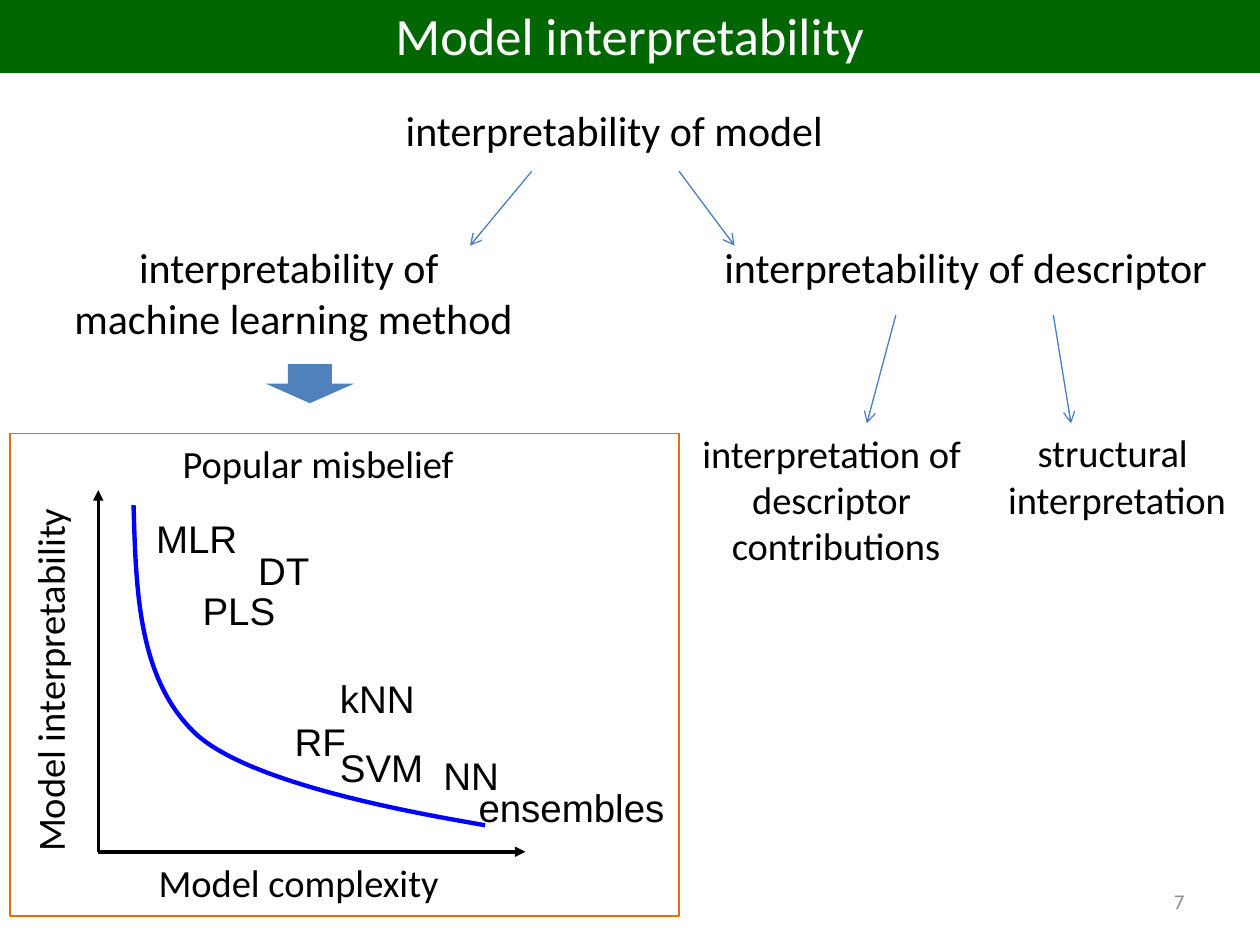
from lxml.etree import SubElement
from pptx import Presentation
from pptx.dml.color import RGBColor
from pptx.enum.shapes import MSO_CONNECTOR, MSO_SHAPE
from pptx.enum.text import MSO_ANCHOR, MSO_AUTO_SIZE, PP_ALIGN
from pptx.oxml.ns import qn
from pptx.util import Inches, Pt

COLS, ROWS = 100, 75
CELL = Inches(10) / COLS
BLACK, WHITE, GREEN, GREY = "000000", "FFFFFF", "006600", "8C8C8C"
BLUE, STEEL, CURVE, ORANGE = "4F81BD", "4B7EBC", "0000FF", "E46C0A"


def cells(*nums):
    """Turn grid cells into lengths."""
    return [round(num * CELL) for num in nums]


def paint(fmt, color):
    """Give a fill or a font colour a hex colour."""
    if hasattr(fmt, "solid"):
        fmt.solid()
        fmt = fmt.fore_color
    fmt.rgb = RGBColor.from_string(color)


def style(shape, fill=None, line=None, width=1):
    """Set fill and line of a shape and drop its shadow."""
    shape.shadow.inherit = False
    if fill:
        paint(shape.fill, fill)
    else:
        shape.fill.background()
    if line:
        paint(shape.line.fill, line)
        shape.line.width = Pt(width)
    else:
        shape.line.fill.background()


def write(frame, text, size, color=BLACK, face="Calibri", align=PP_ALIGN.LEFT):
    """Write one paragraph into a text frame."""
    para = frame.paragraphs[0]
    para.text = text
    para.alignment = align
    para.font.size = Pt(size)
    para.font.name = face
    paint(para.font.color, color)


def label(shapes, box, spot, text, size=22, **look):
    """Place unwrapped text at a spot (left, top, width, height) in a box."""
    left, top, width, height = spot
    item = shapes.add_textbox(*cells(box[0] + left, box[1] + top, width, height))
    item.text_frame.word_wrap = False
    item.text_frame.auto_size = MSO_AUTO_SIZE.SHAPE_TO_FIT_TEXT
    write(item.text_frame, text, size, **look)
    return item


def arrow(shapes, box, start, end, color, width, head):
    """Draw a straight arrow between two points of a box."""
    left, top = box[:2]
    ends = cells(left + start[0], top + start[1], left + end[0], top + end[1])
    item = shapes.add_connector(MSO_CONNECTOR.STRAIGHT, *ends)
    paint(item.line.fill, color)
    item.line.width = Pt(width)
    SubElement(item.line._get_or_add_ln(), qn("a:tailEnd"), type=head)
    SubElement(item._element.spPr, qn("a:effectLst"))


def bend(shapes, box, points, color, width):
    """Draw a chain of cubic curves through start, control and end points."""
    spots = [tuple(cells(box[0] + x, box[1] + y)) for x, y in points]
    pen = shapes.build_freeform(*spots[0])
    pen.add_line_segments(spots[1:], close=False)
    item = pen.convert_to_shape()
    style(item, None, color, width)
    steps = list(item._element.iter(qn("a:lnTo")))
    track = steps[0].getparent()
    for first in range(0, len(steps), 3):
        cubic = SubElement(track, qn("a:cubicBezTo"))
        for step in steps[first:first + 3]:
            cubic.append(step[0])
            track.remove(step)


def banner(shapes, box):
    """Draw the title band."""
    band = shapes.add_shape(MSO_SHAPE.RECTANGLE, *cells(*box))
    style(band, GREEN)
    band.text_frame.vertical_anchor = MSO_ANCHOR.MIDDLE
    write(band.text_frame, "Model interpretability", 30, WHITE, align=PP_ALIGN.CENTER)


def tree(shapes, box):
    """Draw the tree of kinds of interpretability."""
    nodes = [
        ((31, 0, 35.5, 5), "interpretability of model", 24),
        ((4.7, 10.9, 37.2, 9.1), "interpretability of \nmachine learning method", 24),
        ((56.3, 10.9, 40.7, 5), "interpretability of descriptor", 24),
        ((54.6, 25.8, 23.5, 12.1), "interpretation of \ndescriptor \ncontributions", 22),
        ((78.9, 25.8, 19.5, 8.4), "structural \ninterpretation", 22),
    ]
    for spot, text, size in nodes:
        label(shapes, box, spot, text, size, align=PP_ALIGN.CENTER)
    levels = [
        (5.8, 11.7, [(42.2, 37.3), (53.9, 58.3)]),
        (17.2, 25.8, [(71.1, 68.8), (83.6, 85)]),
    ]
    for top, low, pairs in levels:
        for start, end in pairs:
            arrow(shapes, box, (start, top), (end, low), STEEL, 0.75, "arrow")
    block = shapes.add_shape(
        MSO_SHAPE.DOWN_ARROW, *cells(box[0] + 21.1, box[1] + 21.1, 7, 3.1))
    style(block, BLUE)


def plot(shapes, box):
    """Draw the framed sketch of interpretability against complexity."""
    group = shapes.add_group_shape().shapes
    zero = (7, 33.2)
    for end in [(7, 4.5), (40.9, 33.2)]:
        arrow(group, box, zero, end, BLACK, 2, "triangle")
    side = label(group, box, (-11.6, 17.1, 29.5, 4.7), "Model interpretability")
    side.rotation = 270
    label(group, box, (10.8, 33.3, 24.5, 4.7), "Model complexity")
    label(group, box, (12.7, 0, 23.8, 4.7), "Popular misbelief")
    points = [(9.8, 5.7), (10, 12.7), (10.2, 19.6), (14.8, 23.9),
              (19.5, 28.1), (33.8, 30.4), (37.7, 31.1)]
    bend(group, box, points, CURVE, 2.5)
    methods = [
        ("DT", 18.7, 8.5, 6.1), ("MLR", 10.6, 6, 8.5),
        ("PLS", 14.3, 11.7, 7.8), ("NN", 33.4, 24.8, 6.5),
        ("kNN", 25.2, 18.7, 8), ("RF", 21.6, 22.1, 6.1),
        ("SVM", 25.2, 24.2, 8.7), ("ensembles", 36.2, 27.3, 17),
    ]
    for text, left, top, width in methods:
        label(group, box, (left, top, width, 4.7), text, face="Arial")
    style(shapes.add_shape(MSO_SHAPE.RECTANGLE, *cells(*box)), None, ORANGE)


def footer(shapes, box):
    """Write the slide number."""
    frame = shapes.add_textbox(*cells(*box)).text_frame
    frame.word_wrap = True
    frame.vertical_anchor = MSO_ANCHOR.MIDDLE
    write(frame, "7", 12, GREY, align=PP_ALIGN.RIGHT)


def main():
    """Build and save the slide."""
    deck = Presentation()
    deck.slide_width, deck.slide_height = cells(COLS, ROWS)
    shapes = deck.slides.add_slide(deck.slide_layouts[6]).shapes
    banner(shapes, (0, -0.3, COLS, 6.1))
    tree(shapes, (0, 7.8, COLS, 38))
    plot(shapes, (0.8, 34.4, 53.1, 38.3))
    footer(shapes, (71.7, 69.5, 23.3, 4))
    deck.save("out.pptx")


if __name__ == "__main__":
    main()
